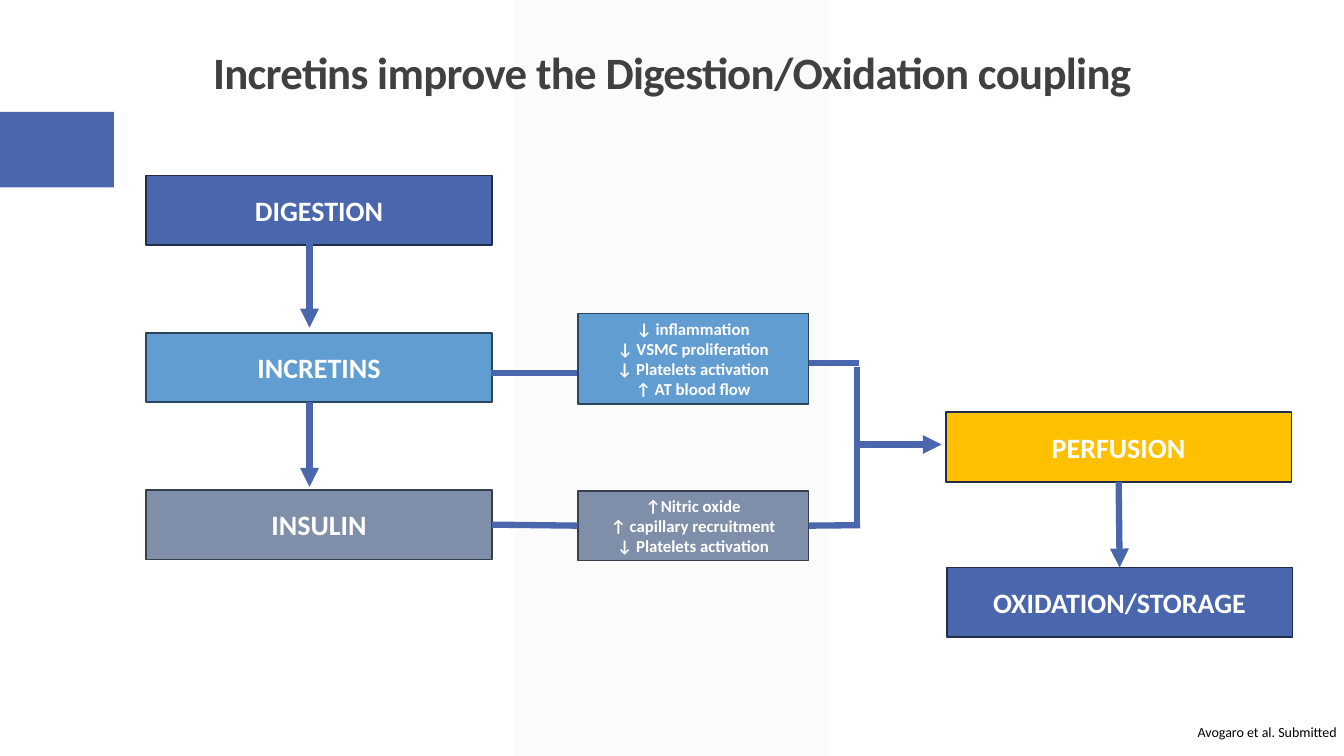
from lxml import etree
from pptx import Presentation
from pptx.dml.color import RGBColor
from pptx.enum.shapes import MSO_CONNECTOR, MSO_SHAPE
from pptx.enum.text import MSO_ANCHOR, PP_ALIGN
from pptx.oxml.ns import qn
from pptx.util import Inches, Pt

STRAIGHT = MSO_CONNECTOR.STRAIGHT
RECTANGLE, PARALLELOGRAM = MSO_SHAPE.RECTANGLE, MSO_SHAPE.PARALLELOGRAM
MIDDLE, BOTTOM = MSO_ANCHOR.MIDDLE, MSO_ANCHOR.BOTTOM
CENTER, LEFT = PP_ALIGN.CENTER, PP_ALIGN.LEFT
SIDE_TOP, SIDE_LEFT, SIDE_BOTTOM, SIDE_RIGHT = range(4)

WHITE = RGBColor(0xFF, 0xFF, 0xFF)
BLACK = RGBColor(0, 0, 0)
CHARCOAL = RGBColor(0x40, 0x40, 0x40)
PALE_GREY = RGBColor(0xF2, 0xF2, 0xF2)
BLUE = RGBColor(0x4A, 0x66, 0xAC)
NAVY = RGBColor(0x20, 0x2D, 0x4B)
SKY = RGBColor(0x62, 0x9D, 0xD1)
DARK_SKY = RGBColor(0x2B, 0x45, 0x5C)
SLATE = RGBColor(0x7F, 0x8F, 0xA9)
DARK_SLATE = RGBColor(0x38, 0x3F, 0x4A)
GOLD = RGBColor(0xFF, 0xC0, 0x00)

SLIDE_WIDTH, SLIDE_HEIGHT = 13.33, 7.5
STAGE_WIDTH, STAGE_HEIGHT = 3.43, 0.69


def write_text(frame, lines, size, color, bold=False, align=CENTER,
               anchor=MIDDLE, wrap=True, line_spacing=None, tracking=None):
    """Fill a text frame, one paragraph a line; tracking is in points."""
    frame.word_wrap = wrap
    frame.vertical_anchor = anchor
    for index, line in enumerate(lines):
        para = frame.add_paragraph() if index else frame.paragraphs[0]
        para.alignment = align
        para.line_spacing = line_spacing
        span = para.add_run()
        span.text = line
        span.font.name = "Calibri"
        span.font.size = Pt(size)
        span.font.bold = bold
        span.font.color.rgb = color
        if tracking is not None:
            span._r.get_or_add_rPr().set("spc", str(round(tracking * 100)))


def add_block(page, left, top, width, height, fill, outline=None, kind=RECTANGLE):
    box = page.shapes.add_shape(kind, Inches(left), Inches(top),
                                Inches(width), Inches(height))
    box.shadow.inherit = False
    box.fill.solid()
    box.fill.fore_color.rgb = fill
    if outline is None:
        box.line.fill.background()
    else:
        box.line.color.rgb = outline
        box.line.width = Pt(1.25)
    return box


def add_stage(page, left, top, name, fill, outline):
    box = add_block(page, left, top, STAGE_WIDTH, STAGE_HEIGHT, fill, outline)
    write_text(box.text_frame, [name], 20, WHITE, bold=True)
    return box


def add_effects(page, left, top, width, height, lines, fill, outline):
    box = add_block(page, left, top, width, height, fill, outline)
    write_text(box.text_frame, lines, 12, WHITE, bold=True)
    return box


def add_link(page, start=(0, 0), end=(0, 0), start_joint=None, end_joint=None,
             arrow=False):
    """Draw a thick line; a joint is a (box, side) pair that overrides its point."""
    link = page.shapes.add_connector(STRAIGHT, *map(Inches, start + end))
    if start_joint:
        link.begin_connect(*start_joint)
    if end_joint:
        link.end_connect(*end_joint)
    link.line.color.rgb = BLUE
    link.line.width = Pt(4.5)
    if arrow:
        etree.SubElement(link.line._get_or_add_ln(), qn("a:tailEnd"), type="triangle")
    etree.SubElement(link._element.spPr, qn("a:effectLst"))


def add_backdrop(page):
    band = add_block(page, 5.1, 0, 3.12, SLIDE_HEIGHT, PALE_GREY, kind=PARALLELOGRAM)
    band.adjustments[0] = 0
    tint = band._element.spPr.find(qn("a:solidFill"))[0]
    etree.SubElement(tint, qn("a:alpha"), val="30000")
    add_block(page, 0, 1.11, 1.13, 0.75, BLUE)


def add_title(page, left, top, width, height):
    title = page.shapes.title
    title.left, title.top = Inches(left), Inches(top)
    title.width, title.height = Inches(width), Inches(height)
    write_text(title.text_frame, ["Incretins improve the Digestion/Oxidation coupling"],
               32, CHARCOAL, bold=True, anchor=BOTTOM, line_spacing=0.9, tracking=-0.5)
    page.shapes._spTree.append(title._element)  # in front of the backdrop


def add_hormones(page, left, top):
    """Stack the left-hand stages and return the incretin and insulin boxes."""
    step = 1.56
    arrow_x = left + 1.62
    add_stage(page, left, top, "DIGESTION", BLUE, NAVY)
    incretins = add_stage(page, left, top + step, "INCRETINS", SKY, DARK_SKY)
    insulin = add_stage(page, left, top + 2 * step, "INSULIN", SLATE, DARK_SLATE)
    for arrow_top in (top + 0.67, top + 0.67 + step + 0.02):
        add_link(page, (arrow_x, arrow_top), (arrow_x, arrow_top + 0.84), arrow=True)
    return incretins, insulin


def add_vascular_effects(page, left, top, insulin):
    """Place both effect boxes, their feeds, and the bracket towards perfusion."""
    width = 2.29
    right, bracket_x = left + width, left + 2.77
    add_link(page, (right, top + 0.49), (bracket_x + 0.02, top + 0.49))
    add_link(page, (left - 0.86, top + 0.59), (left, top + 0.59))
    add_effects(page, left, top, width, 0.9,
                ["↓ inflammation", "↓ VSMC proliferation",
                 "↓ Platelets activation", "↑ AT blood flow"], SKY, DARK_SKY)
    nitric = add_effects(page, left, top + 1.76, width, STAGE_HEIGHT,
                         ["↑Nitric oxide", "↑ capillary recruitment",
                          "↓ Platelets activation"], SLATE, DARK_SLATE)
    add_link(page, start_joint=(insulin, SIDE_RIGHT), end_joint=(nitric, SIDE_LEFT))
    add_link(page, end=(bracket_x + 0.03, top + 2.1), start_joint=(nitric, SIDE_RIGHT))
    add_link(page, (bracket_x, top + 0.53), (bracket_x, top + 2.08))
    add_link(page, (bracket_x, top + 1.3), (bracket_x + 0.84, top + 1.3), arrow=True)


def add_outcome(page, left, top):
    perfusion = add_stage(page, left, top, "PERFUSION", GOLD, NAVY)
    storage = add_stage(page, left + 0.01, top + 1.54, "OXIDATION/STORAGE", BLUE, NAVY)
    add_link(page, start_joint=(perfusion, SIDE_BOTTOM),
             end_joint=(storage, SIDE_TOP), arrow=True)


def add_citation(page, left, top, width, height):
    box = page.shapes.add_textbox(Inches(left), Inches(top), Inches(width), Inches(height))
    write_text(box.text_frame, ["Avogaro et al. Submitted"], 10, BLACK,
               align=LEFT, wrap=False)


def main():
    deck = Presentation()
    deck.slide_width, deck.slide_height = Inches(SLIDE_WIDTH), Inches(SLIDE_HEIGHT)
    page = deck.slides.add_slide(deck.slide_layouts[5])
    add_backdrop(page)
    add_title(page, 0, 0.08, SLIDE_WIDTH, 0.95)
    _, insulin = add_hormones(page, 1.45, 1.74)
    add_vascular_effects(page, 5.73, 3.11, insulin)
    add_outcome(page, 9.38, 4.09)
    add_citation(page, 11.78, 7.13, 1.61, 0.27)
    deck.save("out.pptx")


if __name__ == "__main__":
    main()
